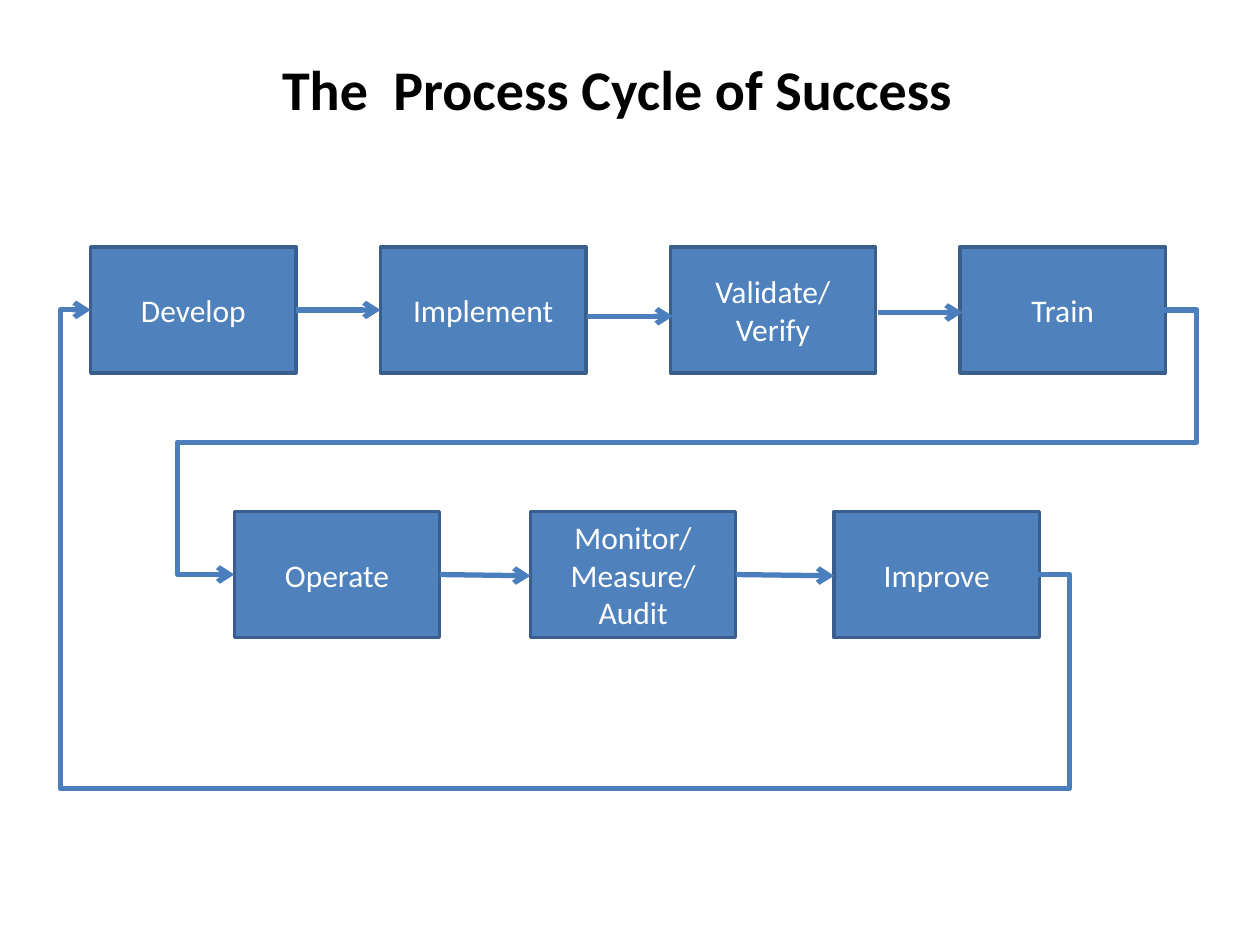
from typing import NamedTuple

import lxml.etree
import pptx
import pptx.dml.color
import pptx.enum.shapes
import pptx.enum.text
import pptx.oxml.ns
import pptx.util

Inches = pptx.util.Inches
qn = pptx.oxml.ns.qn

COLORS = {
    "box": "4F81BD",
    "outline": "3A5F8C",
    "arrow": "4B7EBC",
    "title": "000000",
    "label": "FFFFFF",
}
TITLE_FORMAT = {"name": "Calibri", "size": pptx.util.Pt(32), "bold": True}
LABEL_FORMAT = {"name": "Calibri", "size": pptx.util.Pt(18)}
BOX_WIDTH, BOX_HEIGHT = 1.63, 1
TOP_ROW, BOTTOM_ROW = 1.96, 4.06
TOP_MIDDLE, BOTTOM_MIDDLE = 2.46, 4.56


class Step(NamedTuple):
    label: str  # "\n" starts a paragraph, "\v" breaks a line
    left: float
    top: float


class Arrow(NamedTuple):
    start: tuple[float, float]
    end: tuple[float, float]


class Loop(NamedTuple):
    arrow: Arrow
    exit_x: float
    crossing_y: float
    entry_x: float


TOP_LABELS = ["Develop", "Implement", "Validate/\nVerify", "Train"]
STEPS = [
    *(Step(label, 0.72 + 2.3 * i, TOP_ROW) for i, label in enumerate(TOP_LABELS)),
    Step("Operate", 1.86, BOTTOM_ROW),
    Step("Monitor/\nMeasure/\vAudit", 4.21, BOTTOM_ROW),
    Step("Improve", 6.62, BOTTOM_ROW),
]
ARROWS = [
    Arrow((2.35, TOP_MIDDLE), (3.02, TOP_MIDDLE)),
    Arrow((4.66, 2.51), (5.34, 2.51)),
    Arrow((6.97, 2.48), (7.64, 2.48)),
    Arrow((3.49, BOTTOM_MIDDLE), (4.21, 4.57)),
    Arrow((5.84, BOTTOM_MIDDLE), (6.62, 4.57)),
]
LOOPS = [
    Loop(Arrow((9.24, TOP_MIDDLE), (1.86, BOTTOM_MIDDLE)), 9.5, 3.51, 1.41),
    Loop(Arrow((8.24, BOTTOM_MIDDLE), (0.72, TOP_MIDDLE)), 8.49, 6.26, 0.48),
]


def color(name: str) -> pptx.dml.color.RGBColor:
    return pptx.dml.color.RGBColor.from_string(COLORS[name])


def format_text(text_frame, values: dict, color_name: str) -> None:
    for paragraph in text_frame.paragraphs:
        for run in paragraph.runs:
            for attribute, value in values.items():
                setattr(run.font, attribute, value)
            run.font.color.rgb = color(color_name)


def draw_title(slide) -> None:
    shape = slide.shapes.add_textbox(Inches(2.14), Inches(0.38), Inches(5.57), Inches(0.64))
    shape.text_frame.word_wrap = False
    shape.text_frame.auto_size = pptx.enum.text.MSO_AUTO_SIZE.SHAPE_TO_FIT_TEXT
    shape.text_frame.text = "The  Process Cycle of Success"
    format_text(shape.text_frame, TITLE_FORMAT, "title")


def draw_step(slide, step: Step) -> None:
    shape = slide.shapes.add_shape(
        pptx.enum.shapes.MSO_SHAPE.RECTANGLE,
        Inches(step.left), Inches(step.top), Inches(BOX_WIDTH), Inches(BOX_HEIGHT),
    )
    shape.shadow.inherit = False
    shape.fill.solid()
    shape.fill.fore_color.rgb = color("box")
    shape.line.color.rgb = color("outline")
    shape.line.width = pptx.util.Pt(2)
    text_frame = shape.text_frame
    text_frame.word_wrap = True
    text_frame.vertical_anchor = pptx.enum.text.MSO_ANCHOR.MIDDLE
    text_frame.text = step.label
    for paragraph in text_frame.paragraphs:
        paragraph.alignment = pptx.enum.text.PP_ALIGN.CENTER
    format_text(text_frame, LABEL_FORMAT, "label")


def draw_arrow(slide, arrow: Arrow, kind=pptx.enum.shapes.MSO_CONNECTOR.STRAIGHT):
    connector = slide.shapes.add_connector(
        kind, *(Inches(value) for value in arrow.start + arrow.end)
    )
    connector.line.color.rgb = color("arrow")
    connector.line.width = pptx.util.Pt(3)
    properties = connector._element.spPr
    lxml.etree.SubElement(properties.find(qn("a:ln")), qn("a:tailEnd"), type="arrow")
    lxml.etree.SubElement(properties, qn("a:effectLst"))
    return connector


def draw_loop(slide, loop: Loop) -> None:
    """Bend the connector at distances given as shares of its width and height."""
    connector = draw_arrow(slide, loop.arrow, pptx.enum.shapes.MSO_CONNECTOR.ELBOW)
    (start_x, start_y), (end_x, end_y) = loop.arrow
    shares = [
        (loop.exit_x - start_x) / (end_x - start_x),
        (loop.crossing_y - start_y) / (end_y - start_y),
        (loop.entry_x - start_x) / (end_x - start_x),
    ]
    geometry = connector._element.spPr.find(qn("a:prstGeom"))
    geometry.set("prst", "bentConnector5")
    guides = geometry.find(qn("a:avLst"))
    if guides is None:
        guides = lxml.etree.SubElement(geometry, qn("a:avLst"))
    for number, share in enumerate(shares, start=1):
        lxml.etree.SubElement(
            guides, qn("a:gd"), name=f"adj{number}", fmla=f"val {round(share * 100000)}"
        )


def main() -> None:
    presentation = pptx.Presentation()
    presentation.slide_width = Inches(10)
    presentation.slide_height = Inches(7.5)
    slide = presentation.slides.add_slide(presentation.slide_layouts[6])
    for step in STEPS:
        draw_step(slide, step)
    for arrow in ARROWS:
        draw_arrow(slide, arrow)
    for loop in LOOPS:
        draw_loop(slide, loop)
    draw_title(slide)
    presentation.save("out.pptx")


if __name__ == "__main__":
    main()
